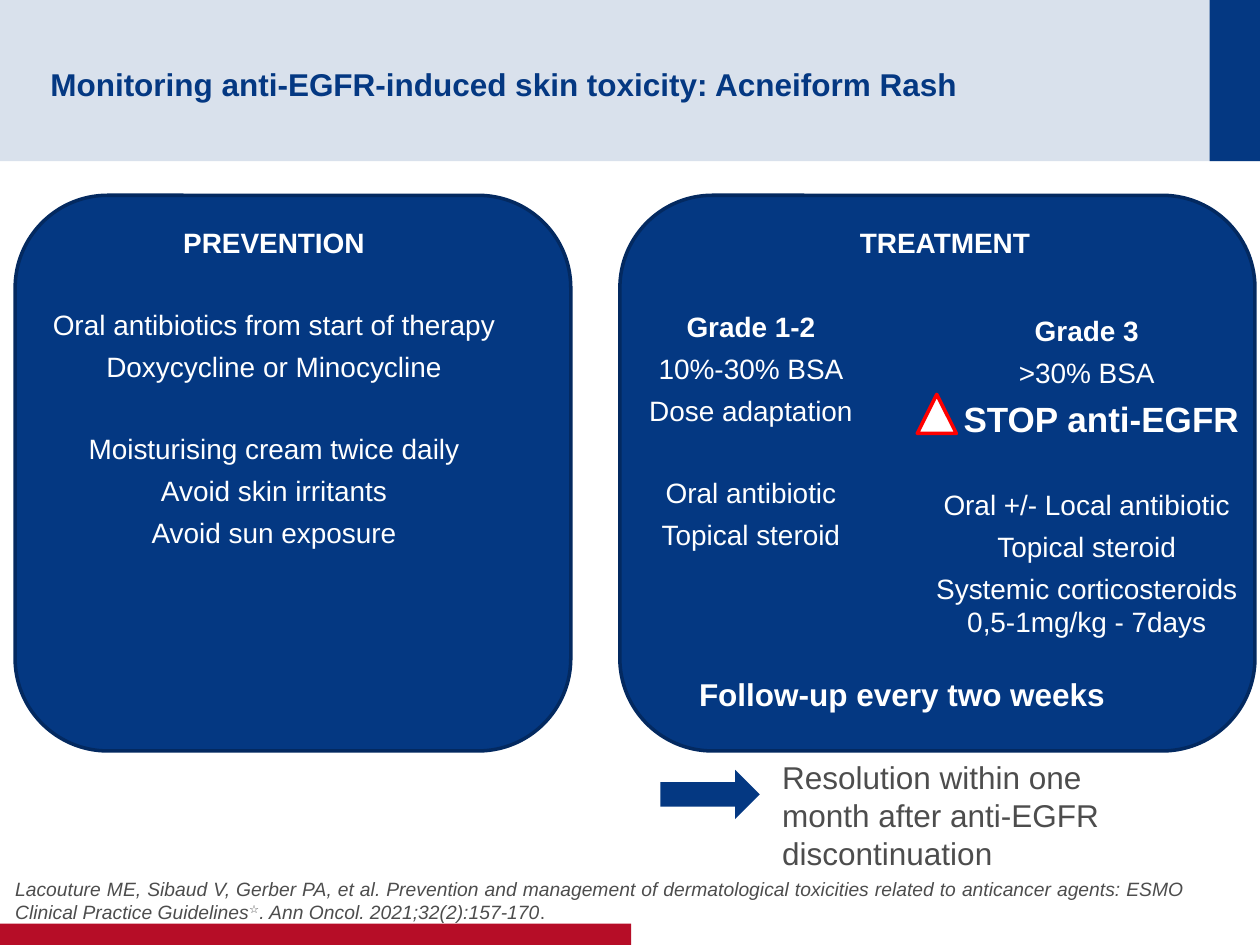
from dataclasses import dataclass

from pptx import Presentation
from pptx.dml.color import RGBColor
from pptx.enum.shapes import MSO_SHAPE
from pptx.enum.text import MSO_ANCHOR, MSO_AUTO_SIZE, PP_ALIGN
from pptx.util import Inches, Pt

COLORS = {
    "navy": "043882",
    "edge": "032960",
    "band": "D9E1EC",
    "crimson": "B60D27",
    "warning": "FF0000",
    "white": "FFFFFF",
    "gray": "4D4D4D",
}
LINE_GAP = 4.7
SECTION_GAP = 23


@dataclass(frozen=True)
class Block:
    kind: MSO_SHAPE
    box: tuple[float, float, float, float]
    fill: str
    line: str | None = None


@dataclass(frozen=True)
class Span:
    text: str
    italic: bool = False
    raised: bool = False


@dataclass(frozen=True)
class Line:
    content: str | tuple[Span, ...]
    bold: bool = False
    size: float | None = None
    before: float = 0
    indent: float = 0


BACKDROP = [
    Block(MSO_SHAPE.RECTANGLE, (0, 0, 10, 1.28), "band"),
    Block(MSO_SHAPE.RECTANGLE, (9.6, 0, 0.4, 1.28), "navy"),
    Block(MSO_SHAPE.RECTANGLE, (0, 7.33, 5.01, 0.17), "crimson"),
    Block(MSO_SHAPE.ROUNDED_RECTANGLE, (4.92, 1.55, 5.04, 4.41), "navy", "edge"),
    Block(MSO_SHAPE.ROUNDED_RECTANGLE, (0.12, 1.55, 4.41, 4.41), "navy", "edge"),
]
MARKERS = [
    Block(MSO_SHAPE.ISOSCELES_TRIANGLE, (7.28, 3.13, 0.31, 0.31), "white", "warning"),
    Block(MSO_SHAPE.RIGHT_ARROW, (5.24, 6.11, 0.79, 0.39), "navy"),
]
PREVENTION = [
    Line("PREVENTION", bold=True),
    Line("Oral antibiotics from start of therapy", before=SECTION_GAP),
    Line("Doxycycline or Minocycline"),
    Line("Moisturising cream twice daily", before=SECTION_GAP),
    Line("Avoid skin irritants"),
    Line("Avoid sun exposure"),
]
MILD_GRADES = [
    Line("Grade 1-2", bold=True),
    Line("10%-30% BSA"),
    Line("Dose adaptation"),
    Line("Oral antibiotic", before=SECTION_GAP),
    Line("Topical steroid"),
]
SEVERE_GRADE = [
    Line("Grade 3", bold=True),
    Line(">30% BSA"),
    Line("STOP anti-EGFR", bold=True, size=20, indent=0.23),
    Line("Oral +/- Local antibiotic", before=SECTION_GAP),
    Line("Topical steroid"),
    Line("Systemic corticosteroids 0,5-1mg/kg - 7days"),
]
CITATION = (
    Span("Lacouture ME, Sibaud V, Gerber PA, et al. Prevention and management of "
         "dermatological toxicities related to anticancer agents: ESMO Clinical "
         "Practice Guidelines", italic=True),
    Span("☆", italic=True, raised=True),
    Span(". Ann Oncol. 2021;32(2):157-170", italic=True),
    Span("."),
)


def rgb(name: str) -> RGBColor:
    return RGBColor.from_string(COLORS[name])


def draw_block(slide, block: Block) -> None:
    shape = slide.shapes.add_shape(block.kind, *map(Inches, block.box))
    shape.shadow.inherit = False
    shape.fill.solid()
    shape.fill.fore_color.rgb = rgb(block.fill)
    if block.line:
        shape.line.color.rgb = rgb(block.line)
        shape.line.width = Pt(2)
    else:
        shape.line.fill.background()


def write(shape, lines: list[Line], *, box: tuple[float, float, float, float],
          size: float = 16, color: str = "white", align=PP_ALIGN.CENTER,
          anchor=MSO_ANCHOR.TOP, after: float = LINE_GAP,
          insets: tuple[float, float, float, float] = (0, 0.05, 0, 0.05)) -> None:
    shape.left, shape.top, shape.width, shape.height = map(Inches, box)
    frame = shape.text_frame
    frame.word_wrap = True
    frame.auto_size = MSO_AUTO_SIZE.NONE
    frame.vertical_anchor = anchor
    (frame.margin_left, frame.margin_top,
     frame.margin_right, frame.margin_bottom) = map(Inches, insets)
    for index, line in enumerate(lines):
        paragraph = frame.add_paragraph() if index else frame.paragraphs[0]
        paragraph.alignment = align
        paragraph.line_spacing = 1.0
        paragraph.space_before, paragraph.space_after = Pt(line.before), Pt(after)
        properties = paragraph._p.get_or_add_pPr()
        properties.set("marL", str(Inches(line.indent)))
        properties.set("indent", "0")
        properties.append(properties.makeelement(
            "{http://schemas.openxmlformats.org/drawingml/2006/main}buNone", {}))
        spans = (Span(line.content),) if isinstance(line.content, str) else line.content
        for span in spans:
            run = paragraph.add_run()
            run.text = span.text
            run.font.name = "Arial"
            run.font.size = Pt(line.size or size)
            run.font.bold = line.bold
            run.font.italic = span.italic
            run.font.color.rgb = rgb(color)
            if span.raised:
                run._r.get_or_add_rPr().set("baseline", "30000")


def add_text(slide, lines: list[Line], **style) -> None:
    write(slide.shapes.add_textbox(0, 0, 0, 0), lines, **style)


def main() -> None:
    """Build the acneiform rash monitoring slide."""
    deck = Presentation()
    deck.slide_width, deck.slide_height = Inches(10), Inches(7.5)
    slide = deck.slides.add_slide(deck.slide_layouts.get_by_name("Comparison"))
    title, prevention, citation, treatment, spare = list(slide.placeholders)
    spare._element.getparent().remove(spare._element)

    for block in BACKDROP:
        draw_block(slide, block)
    for placeholder in (title, prevention, treatment, citation):
        slide.shapes._spTree.append(placeholder._element)

    write(title, [Line("Monitoring anti-EGFR-induced skin toxicity: Acneiform Rash", bold=True)],
          box=(0.4, 0.2, 9.01, 0.88), size=18, color="navy", align=PP_ALIGN.LEFT,
          anchor=MSO_ANCHOR.MIDDLE, after=0, insets=(0, 0.05, 0, 0))
    write(prevention, PREVENTION, box=(0.11, 1.74, 4.13, 3.66))
    write(treatment, [Line("TREATMENT", bold=True)], box=(4.65, 1.74, 5.7, 3.66))
    write(citation, [Line(CITATION)], box=(0.12, 6.8, 9.29, 0.53), size=11, color="gray",
          align=PP_ALIGN.JUSTIFY, anchor=MSO_ANCHOR.BOTTOM, after=0, insets=(0, 0, 0, 0))
    add_text(slide, MILD_GRADES, box=(4.92, 2.41, 2.08, 1.26))
    add_text(slide, SEVERE_GRADE, box=(7.29, 2.44, 2.67, 0.86))
    add_text(slide, [Line("Follow-up every two weeks", bold=True)],
             box=(4.76, 5.31, 4.8, 0.4), size=18, after=0, insets=(0.1, 0.05, 0.1, 0.05))
    for marker in MARKERS:
        draw_block(slide, marker)
    add_text(slide, [Line("Resolution within one month after anti-EGFR discontinuation")],
             box=(6.11, 5.97, 3.23, 1.01), size=18, color="gray", align=PP_ALIGN.LEFT,
             after=0, insets=(0.1, 0.05, 0.1, 0.05))
    deck.save("out.pptx")


if __name__ == "__main__":
    main()
